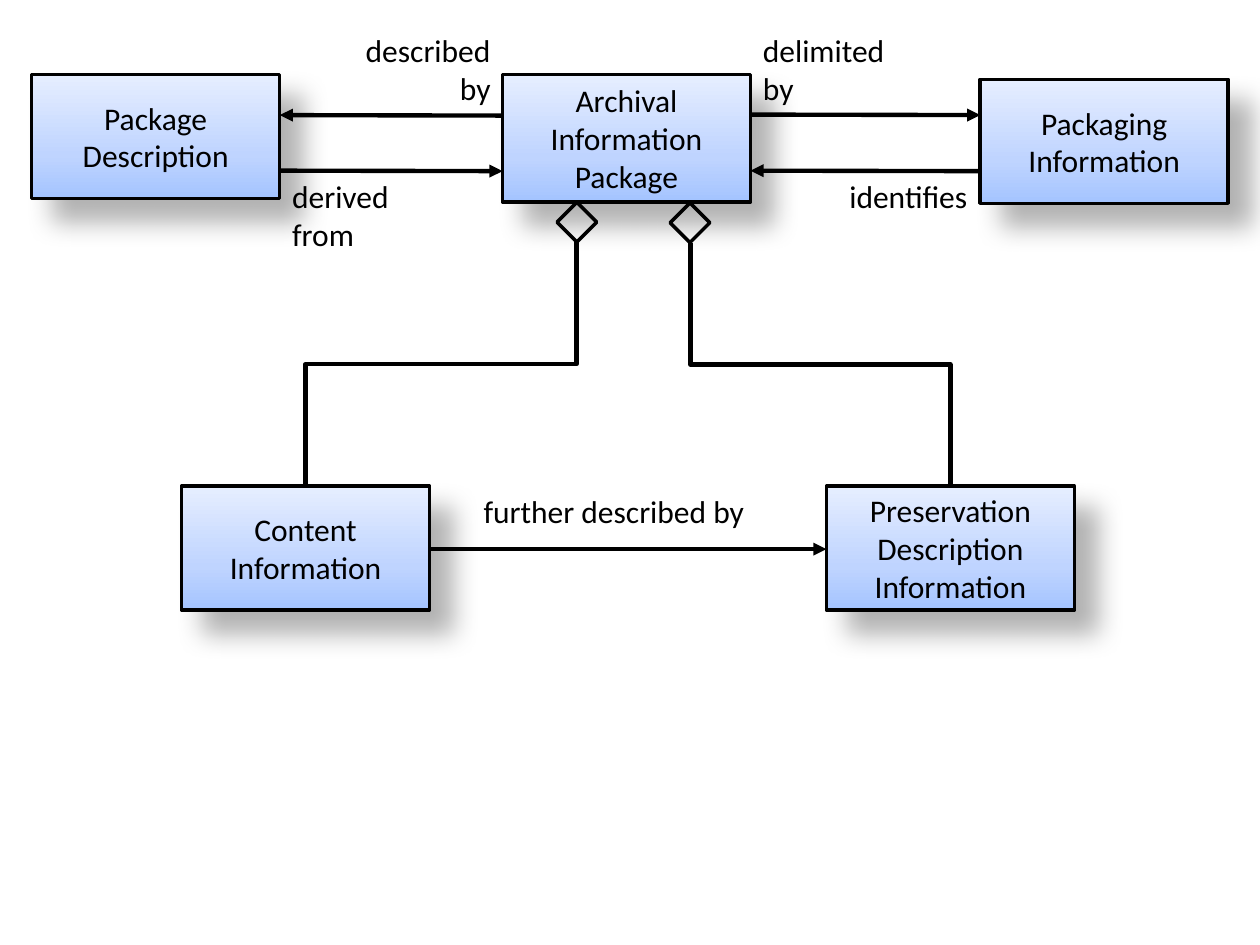
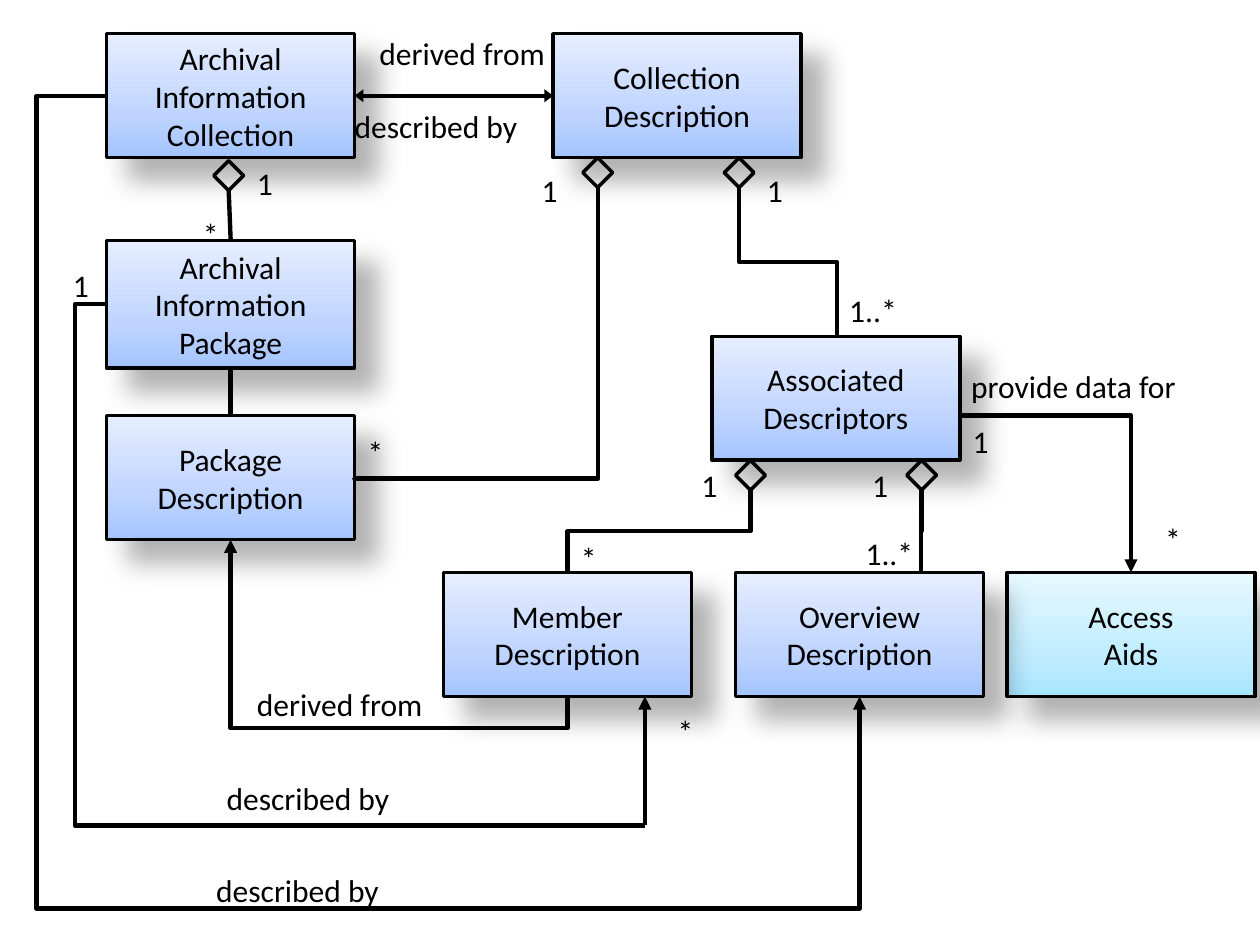
"""Build two slides of information package diagrams with boxes, diamonds and routed connectors."""
from dataclasses import dataclass

from lxml import etree
from pptx import Presentation, util as u
from pptx.dml.color import RGBColor
from pptx.enum import shapes, text
from pptx.oxml import ns


@dataclass(frozen=True)
class Theme:
    font: str = "Calibri"
    size: float = 18
    ink: str = "000000"
    outline: float = 2
    link: float = 2.5
    blue: tuple = ((0, "A4C4FF"), (35, "BFD4FF"), (100, "E6EEFF"))
    cyan: tuple = ((0, "A7E6FF"), (35, "C1EDFF"), (100, "E7F8FF"))


T = Theme()
BOX_W, BOX_H, TALL_H = 5, 2.5, 2.57
ONE_W, RANGE_W, LINE_H = 0.94, 1.73, 1
FREE, LOOP_W = 6.07, 1.07
INK = RGBColor.from_string(T.ink)
LEFT, RIGHT, CENTER = text.PP_ALIGN.LEFT, text.PP_ALIGN.RIGHT, text.PP_ALIGN.CENTER
FLUSH = dict(margin_left=0, margin_top=0, margin_right=0, margin_bottom=0)

PACKAGE = {
    "boxes": [
        ("Archival Information Package", 10.13, 1.5, TALL_H, T.blue),
        ("Preservation Description\nInformation", 16.66, 9.8, BOX_H, T.blue),
        ("Content Information", 3.66, 9.8, BOX_H, T.blue),
        ("Package Description", 0.64, 1.5, BOX_H, T.blue),
        ("Packaging Information", 19.76, 1.6, BOX_H, T.blue),
    ],
    "diamond_size": 0.8,
    "diamonds": [(13.51, 4.09), (11.23, 4.08)],
    "lines": [
        ((8.66, 11.07), (16.66, 11.07), {"tail": "med"}),
        ((5.64, 3.44), (10.13, 3.45), {"tail": "med"}),
        ((10.13, 2.33), (5.64, 2.32), {"tail": "med"}),
        ((15.13, 2.31), (19.76, 2.32), {"tail": "med"}),
        ((19.76, 3.45), (15.13, 3.44), {"tail": "med"}),
    ],
    "elbows": [
        ((13.92, 4.9), (19.16, 9.8), True, [7.35], {}),
        ((11.62, 4.88), (6.16, 9.8), True, [7.34], {}),
    ],
    "labels": [
        ("further described by", 9.5, 9.8, 6.38, LINE_H, LEFT, {}),
        ("derived\nfrom", 5.64, 3.45, 4.5, 1.8, LEFT, {}),
        ("described\nby", 5.64, 0.51, 4.5, 1.8, RIGHT, {}),
        ("delimited\nby", 15.13, 0.51, 4.62, 1.8, LEFT, {}),
        ("identifies", 15.13, 3.45, 4.62, LINE_H, RIGHT, {}),
    ],
}

ONES = [(15.21, 3.33), (10.67, 3.33), (4.93, 3.18), (1.22, 5.23),
        (13.89, 9.28), (17.33, 9.28), (19.36, 8.38)]
STARS = [(23.24, 10.36), (11.46, 10.74), (13.41, 14.22), (3.84, 4.22), (7.16, 8.61)]
RANGES = [(16.87, 5.74), (17.2, 10.64)]

COLLECTION = {
    "boxes": [
        ("Archival Information Collection", 2.15, 0.68, BOX_H, T.blue),
        ("Associated\nDescriptors", 14.35, 6.78, BOX_H, T.blue),
        ("Access\nAids", 20.3, 11.54, BOX_H, T.cyan),
        ("Overview\nDescription", 14.83, 11.54, BOX_H, T.blue),
        ("Member\nDescription", 8.94, 11.54, BOX_H, T.blue),
        ("Archival Information Package", 2.15, 4.85, TALL_H, T.blue),
        ("Package\nDescription", 2.15, 8.38, BOX_H, T.blue),
        ("Collection\nDescription", 11.15, 0.68, BOX_H, T.blue),
    ],
    "diamond_size": 0.6,
    "diamonds": [(4.31, 3.24), (14.83, 9.28), (18.28, 9.28), (14.6, 3.18), (11.75, 3.18)],
    "lines": [
        ((4.61, 3.84), (4.65, 4.85), {}),
        ((4.65, 8.38), (4.65, 7.37), {}),
        ((13, 16.64), (13, 14.04), {"tail": "med"}),
        ((7.15, 1.93), (11.15, 1.93), {"head": "sm", "tail": "sm"}),
    ],
    "elbows": [
        ((19.35, 8.38), (22.8, 11.54), False, [], {"tail": "med"}),
        ((18.57, 11.54), (18.58, 9.88), True, [10.71], {}),
        ((11.44, 11.54), (15.13, 9.88), True, [10.71], {}),
        ((11.44, 14.04), (4.65, 10.88), True, [14.68], {"tail": "med"}),
        ((13, 16.64), (2.15, 6.13), False, [1.51], {}),
        ((17.33, 14.04), (2.15, 1.93), True, [18.31, 0.74], {"head": "med"}),
        ((7.15, 9.63), (12.06, 3.78), True, [9.65], {}),
        ((16.87, 6.78), (14.9, 3.78), True, [5.28], {}),
    ],
    "labels": [
        ("derived from", 4.93, 13.69, FREE, LOOP_W, LEFT, {}),
        ("described by", 4.32, 15.57, FREE, LOOP_W, LEFT, {}),
        ("described by", 4.11, 17.43, FREE, LOOP_W, LEFT, {}),
        ("provide data for", 19.33, 7.27, FREE, LOOP_W, LEFT, {}),
        ("derived from", 7.65, 0.68, 3.83, 0.77, LEFT, FLUSH),
        ("described by", 7.15, 2.16, 3.83, 0.77, LEFT, FLUSH),
        *[(mark, x, y, w, LINE_H, LEFT, {})
          for mark, w, spots in (("1", ONE_W, ONES), ("*", ONE_W, STARS), ("1..*", RANGE_W, RANGES))
          for x, y in spots],
    ],
}


def cm(*values):
    return [u.Cm(v) for v in values]


def child(parent, tag, **attrs):
    e = etree.SubElement(parent, ns.qn("a:" + tag))
    for name, value in attrs.items():
        e.set(name, str(value))
    return e


def set_line(sp, width):
    sp.line.color.rgb = INK
    sp.line.width = u.Pt(width)


def write(sp, words, align, anchor, margins):
    tf = sp.text_frame
    values = dict(word_wrap=True, auto_size=text.MSO_AUTO_SIZE.NONE, vertical_anchor=anchor, **margins)
    for name, value in values.items():
        setattr(tf, name, value)
    for i, line in enumerate(words.split("\n")):
        p = tf.paragraphs[0] if i == 0 else tf.add_paragraph()
        p.alignment = align
        r = p.add_run()
        r.text = line
        for name, value in dict(name=T.font, size=u.Pt(T.size)).items():
            setattr(r.font, name, value)
        r.font.color.rgb = INK


def add_box(s, words, x, y, h, stops):
    sp = s.shapes.add_shape(shapes.MSO_SHAPE.RECTANGLE, *cm(x, y, BOX_W, h))
    set_line(sp, T.outline)
    pr = sp._element.spPr
    grad = etree.Element(ns.qn("a:gradFill"), rotWithShape="1")
    stop_list = child(grad, "gsLst")
    for pos, color in stops:
        child(child(stop_list, "gs", pos=pos * 1000), "srgbClr", val=color)
    child(grad, "lin", ang=270 * 60000, scaled=0)
    pr.find(ns.qn("a:prstGeom")).addnext(grad)
    shadow = child(child(pr, "effectLst"), "outerShdw", blurRad=u.Pt(15), dist=u.Pt(18),
                   dir=45 * 60000, algn="tl", rotWithShape=0)
    child(child(shadow, "srgbClr", val=T.ink), "alpha", val=30000)
    write(sp, words, CENTER, text.MSO_ANCHOR.MIDDLE, {})


def add_diamond(s, x, y, size):
    sp = s.shapes.add_shape(shapes.MSO_SHAPE.DIAMOND, *cm(x, y, size, size))
    sp.shadow.inherit = False
    sp.fill.background()
    set_line(sp, T.outline)


def add_line(s, start, end, arrows, kind=shapes.MSO_CONNECTOR.STRAIGHT):
    c = s.shapes.add_connector(kind, *cm(*start, *end))
    set_line(c, T.link)
    ln = c.line._get_or_add_ln()
    for side in ("head", "tail"):
        if side in arrows:
            child(ln, side + "End", type="triangle", w="med", len=arrows[side])
    child(c._element.spPr, "effectLst")
    return c


def add_elbow(s, start, end, upright, bends, arrows):
    c = add_line(s, start, end, arrows, shapes.MSO_CONNECTOR.ELBOW)
    dx, dy = end[0] - start[0], end[1] - start[1]
    pr = c._element.spPr
    if upright:
        w, h = abs(dy), abs(dx)
        mx, my = (start[0] + end[0]) / 2, (start[1] + end[1]) / 2
        for name, value in zip(("left", "top", "width", "height"), cm(mx - w / 2, my - h / 2, w, h)):
            setattr(c, name, value)
        down_right = dx > 0 and dy > 0
        turn = 270 if down_right else 90
        flips = (down_right or dy < 0, dx > 0 and not down_right)
    else:
        turn = 180 if dx < 0 and dy < 0 else 0
        flips = (False, False) if turn else (dx < 0, dy < 0)
    frame = pr.find(ns.qn("a:xfrm"))
    for name, value in dict(rot=turn * 60000, flipH=int(flips[0]), flipV=int(flips[1])).items():
        frame.set(name, str(value))
    geom = pr.find(ns.qn("a:prstGeom"))
    geom.set("prst", f"bentConnector{len(bends) + 2}")
    for old in list(geom):
        geom.remove(old)
    guides = child(geom, "avLst")
    for i, bend in enumerate(bends):
        axis = (int(upright) + i) % 2
        share = (bend - start[axis]) / (end[axis] - start[axis])
        child(guides, "gd", name=f"adj{i + 1}", fmla=f"val {round(share * 100000)}")


def add_label(s, words, x, y, w, h, align, margins):
    write(s.shapes.add_textbox(*cm(x, y, w, h)), words, align, text.MSO_ANCHOR.TOP, margins)


def add_diagram(prs, d):
    s = prs.slides.add_slide(prs.slide_layouts[6])
    for box in d["boxes"]:
        add_box(s, *box)
    for spot in d["diamonds"]:
        add_diamond(s, *spot, d["diamond_size"])
    for line in d["lines"]:
        add_line(s, *line)
    for elbow in d["elbows"]:
        add_elbow(s, *elbow)
    for label in d["labels"]:
        add_label(s, *label)


def main():
    prs = Presentation()
    prs.slide_width, prs.slide_height = cm(25.4, 19.05)
    for diagram in (PACKAGE, COLLECTION):
        add_diagram(prs, diagram)
    prs.save("out.pptx")


if __name__ == "__main__":
    main()
